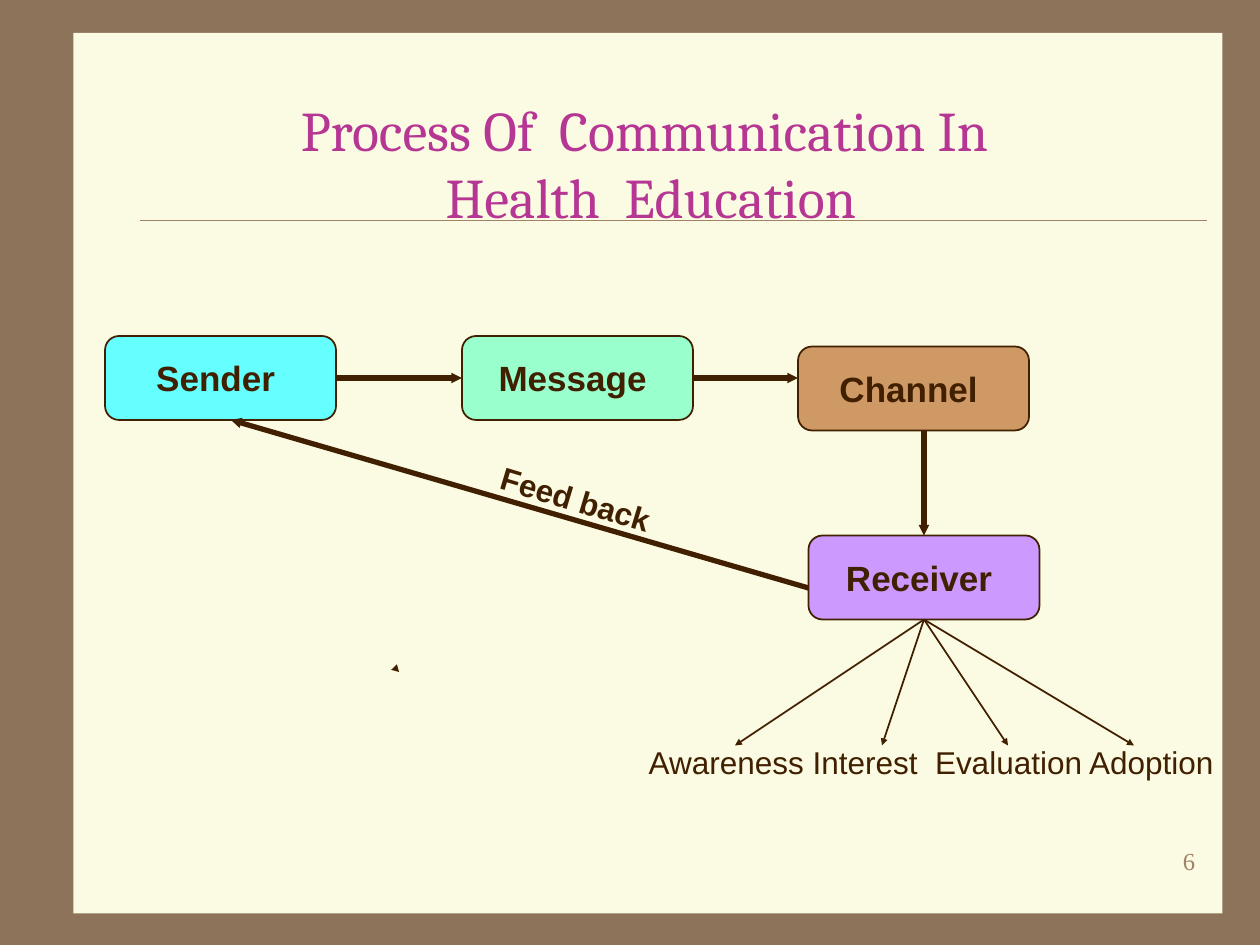
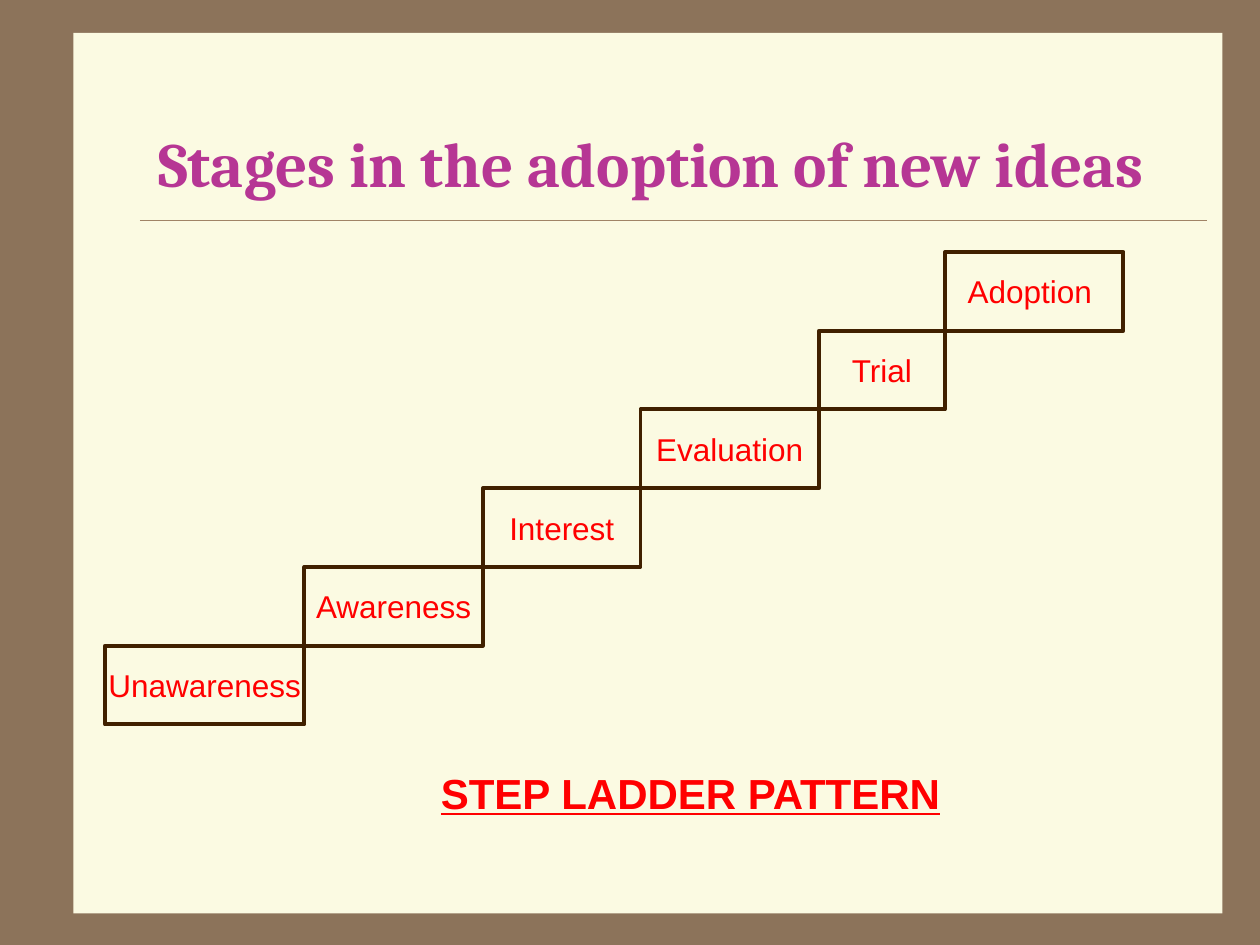
import pptx
import pptx.util
from lxml import etree
from pptx.dml.color import RGBColor
from pptx.enum.shapes import MSO_CONNECTOR, MSO_SHAPE
from pptx.enum.text import MSO_ANCHOR, MSO_AUTO_SIZE, PP_ALIGN
from pptx.oxml.ns import qn

Pt = pptx.util.Pt

# Shared colours and fonts
FRAME = RGBColor(0x8C, 0x73, 0x5A)
PAPER = RGBColor(0xFB, 0xFA, 0xE2)
RULE = RGBColor(0xA0, 0x83, 0x66)
TITLE = RGBColor(0xB6, 0x36, 0x94)
INK = RGBColor(0x40, 0x20, 0x00)
RED = RGBColor(0xFF, 0x00, 0x00)
CYAN = RGBColor(0x66, 0xFF, 0xFF)
MINT = RGBColor(0x99, 0xFF, 0xCC)
TAN = RGBColor(0xCE, 0x99, 0x64)
VIOLET = RGBColor(0xCC, 0x99, 0xFF)
TITLE_FONT = "Cambria"
BODY_FONT = "Arial"
NUMBER_FONT = "Times New Roman"

TITLE_ONLY = 5
BOX_WIDTH, BOX_HEIGHT = 132, 48
STEP_HEIGHT = 45


def format_text(shape, text, size, color, font=BODY_FONT, bold=False,
                underline=False, align=PP_ALIGN.LEFT):
    text_frame = shape.text_frame
    text_frame.text = text
    for paragraph in text_frame.paragraphs:
        paragraph.alignment = align
        for run in paragraph.runs:
            run.font.name = font
            run.font.size = Pt(size)
            run.font.bold = bold
            run.font.underline = underline
            run.font.color.rgb = color


def style_shape(shape, fill=None, line_width=None):
    shape.shadow.inherit = False
    if fill is None:
        shape.fill.background()
    else:
        shape.fill.solid()
        shape.fill.fore_color.rgb = fill
    if line_width is None:
        shape.line.fill.background()
    else:
        shape.line.color.rgb = INK
        shape.line.width = Pt(line_width)


def add_box(slide, kind, left, top, width, height, fill=None, line_width=None):
    shape = slide.shapes.add_shape(kind, Pt(left), Pt(top), Pt(width), Pt(height))
    style_shape(shape, fill, line_width)
    shape.text_frame.word_wrap = False
    shape.text_frame.vertical_anchor = MSO_ANCHOR.MIDDLE
    return shape


def add_outline(slide, points, fill):
    start, *others = [(Pt(x), Pt(y)) for x, y in points]
    builder = slide.shapes.build_freeform(*start)
    builder.add_line_segments(others, close=True)
    style_shape(builder.convert_to_shape(), fill)


def add_line(slide, start, end, color, width, arrow=False):
    points = [Pt(value) for value in (*start, *end)]
    connector = slide.shapes.add_connector(MSO_CONNECTOR.STRAIGHT, *points)
    connector.line.color.rgb = color
    connector.line.width = Pt(width)
    if arrow:
        line_xml = connector.line._get_or_add_ln()
        etree.SubElement(line_xml, qn("a:tailEnd"), type="triangle", w="sm", len="sm")
    etree.SubElement(connector._element.spPr, qn("a:effectLst"))


def add_label(slide, text, left, top, width, height, size, color, rotation=0, **style):
    label = slide.shapes.add_textbox(Pt(left), Pt(top), Pt(width), Pt(height))
    label.rotation = rotation
    label.text_frame.word_wrap = False
    label.text_frame.auto_size = MSO_AUTO_SIZE.SHAPE_TO_FIT_TEXT
    format_text(label, text, size, color, **style)


def add_titled_slide(presentation, text, size, bold=False):
    slide = presentation.slides.add_slide(presentation.slide_layouts[TITLE_ONLY])
    add_box(slide, MSO_SHAPE.RECTANGLE, 42, 18.8, 656.5, 503.2, fill=PAPER)
    add_line(slide, (80, 126), (690, 126), RULE, 0.25)

    title = slide.shapes.title
    title.left, title.top, title.width, title.height = Pt(66), Pt(66), Pt(612), Pt(54)
    title.text_frame.auto_size = MSO_AUTO_SIZE.NONE
    title.text_frame.vertical_anchor = MSO_ANCHOR.MIDDLE
    format_text(title, text, size, TITLE, TITLE_FONT, bold, align=PP_ALIGN.CENTER)
    # Bring the title in front of the paper panel
    slide.shapes.element.append(title.element)
    return slide


def build_process_slide(presentation):
    slide = add_titled_slide(
        presentation, "Process Of  Communication In \vHealth  Education", 32)
    add_label(slide, "6", 540, 480, 150, 36, 14, RULE,
              font=NUMBER_FONT, align=PP_ALIGN.RIGHT)

    # Stations of the message
    stations = [
        ("Sender ", 60, 192, CYAN),
        ("Message ", 264, 192, MINT),
        ("Channel ", 456, 198, TAN),
        ("Receiver ", 462, 306, VIOLET),
    ]
    for name, left, top, fill in stations:
        box = add_box(slide, MSO_SHAPE.ROUNDED_RECTANGLE, left, top,
                      BOX_WIDTH, BOX_HEIGHT, fill, 1)
        format_text(box, name, 20, INK, bold=True, align=PP_ALIGN.CENTER)

    # Flow between the stations, ending with the feedback
    flow = [
        ((192, 216), (264, 216)),
        ((396, 216), (456, 216)),
        ((528, 246), (528, 306)),
        ((462, 336), (132, 240)),
    ]
    for start, end in flow:
        add_line(slide, start, end, INK, 3, arrow=True)
    add_label(slide, "Feed back", 264, 270.7, 130, 29, 18, INK,
              rotation=16.7, bold=True, align=PP_ALIGN.CENTER)

    # Outcomes at the receiver
    for outcome_x in (420, 504, 576, 648):
        add_line(slide, (528, 354), (outcome_x, 426), INK, 1, arrow=True)
    add_label(slide, "Awareness Interest  Evaluation Adoption",
              363.6, 421.2, 338.4, 29, 18, INK)

    # Lone arrowhead
    add_outline(slide, [(228, 384), (223.5, 382.8), (226.8, 379.6)], INK)


def build_stages_slide(presentation):
    slide = add_titled_slide(
        presentation, "Stages in the adoption of new ideas", 36, bold=True)

    # Each step starts where the one below it ends
    steps = [("Unawareness", 114), ("Awareness", 102), ("Interest", 90),
             ("Evaluation", 102), ("Trial", 72), ("Adoption ", 102)]
    left, top = 60, 369
    for name, width in steps:
        step = add_box(slide, MSO_SHAPE.RECTANGLE, left, top, width,
                       STEP_HEIGHT, line_width=2.25)
        format_text(step, name, 18, RED, align=PP_ALIGN.CENTER)
        left += width
        top -= STEP_HEIGHT

    add_label(slide, "STEP LADDER PATTERN", 244.8, 435, 303.8, 36, 24, RED,
              bold=True, underline=True)


def main():
    presentation = pptx.Presentation()
    presentation.slide_width, presentation.slide_height = Pt(720), Pt(540)
    background = presentation.slide_master.background.fill
    background.solid()
    background.fore_color.rgb = FRAME
    build_process_slide(presentation)
    build_stages_slide(presentation)
    presentation.save("out.pptx")


if __name__ == "__main__":
    main()
